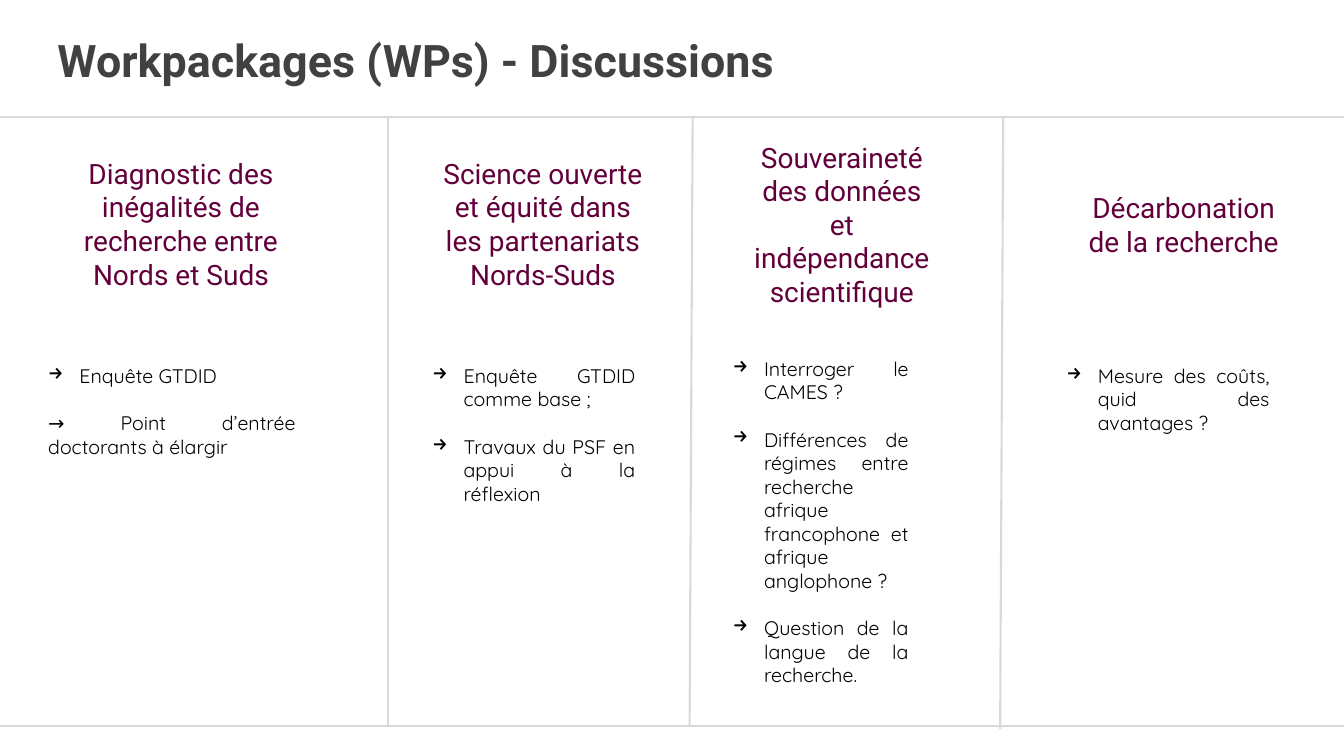
from lxml import etree
from pptx import Presentation
from pptx.dml.color import RGBColor
from pptx.enum.shapes import MSO_CONNECTOR
from pptx.enum.text import MSO_ANCHOR, MSO_AUTO_SIZE, PP_ALIGN
from pptx.oxml.ns import qn
from pptx.util import Inches, Pt

STRAIGHT = MSO_CONNECTOR.STRAIGHT
TOP = MSO_ANCHOR.TOP
GROW = MSO_AUTO_SIZE.SHAPE_TO_FIT_TEXT
LEFT, CENTER, JUSTIFY = PP_ALIGN.LEFT, PP_ALIGN.CENTER, PP_ALIGN.JUSTIFY

WIDTH, HEIGHT = 13.33, 7.5
GREY, DARK, PLUM, BLACK = "D9D9D9", "414042", "63003C", "000000"
ARROW = "→"
HANGING = 0.31
ITEM_GAP = 17

TITLE = "Workpackages (WPs) - Discussions"

# Boxes are left, top, width, height; an item is its text and whether it has a bullet.
WORKPACKAGES = [
    {
        "heading": "Diagnostic des inégalités de recherche entre Nords et Suds",
        "heading_box": (0.47, 1.5, 2.65, 1.45),
        "items": [("Enquête GTDID", True),
                  ("→ Point d’entrée doctorants à élargir", False)],
        "items_box": (0.38, 3.56, 2.65, 1.04),
    },
    {
        "heading": "Science ouverte et équité dans les partenariats Nords-Suds",
        "heading_box": (4.23, 1.5, 2.31, 1.45),
        "items": [("Enquête GTDID comme base ;", True),
                  ("Travaux du PSF en appui à la réflexion", True)],
        "items_box": (4.19, 3.56, 2.21, 1.51),
    },
    {
        "heading": "Souveraineté des données et indépendance scientifique",
        "heading_box": (7.31, 1.34, 2.08, 1.78),
        "items": [("Interroger le CAMES ?", True),
                  ("Différences de régimes entre recherche afrique francophone "
                   "et afrique anglophone ?", True),
                  ("Question de la langue de la recherche.", True)],
        "items_box": (7.17, 3.49, 1.94, 3.4),
    },
    {
        "heading": "Décarbonation de la recherche",
        "heading_box": (10.62, 1.84, 2.24, 0.77),
        "items": [("Mesure des coûts, quid des avantages ?", True)],
        "items_box": (10.48, 3.56, 2.21, 1.04),
    },
]

# Start x, start y, end x, end y
RULES = [
    (0, 1.16, WIDTH, 1.16),
    (0, 7.2, WIDTH, 7.2),
    (3.85, 7.2, 3.85, 1.16),
    (6.84, 7.21, 6.87, 1.15),
    (9.92, 7.23, 9.95, 1.16),
]


def color(value):
    return RGBColor.from_string(value)


def add_rule(slide, ends):
    rule = slide.shapes.add_connector(STRAIGHT, *map(Inches, ends))
    rule.line.color.rgb = color(GREY)
    rule.line.width = Pt(1.5)
    etree.SubElement(rule._element.spPr, qn("a:effectLst"))


def add_arrow_bullet(paragraph):
    properties = paragraph._p.get_or_add_pPr()
    properties.set("marL", str(Inches(HANGING)))
    properties.set("indent", str(-Inches(HANGING)))
    bullet_color = etree.SubElement(properties, qn("a:buClr"))
    etree.SubElement(bullet_color, qn("a:srgbClr"), val=BLACK)
    etree.SubElement(properties, qn("a:buChar"), char=ARROW)


def fill_text(shape, box, items, alignment, font_name, size, text_color, bold=False):
    """Place a shape and write its items, each a text and a bullet flag."""
    shape.left, shape.top, shape.width, shape.height = map(Inches, box)
    frame = shape.text_frame
    frame.word_wrap = True
    frame.auto_size = GROW
    frame.vertical_anchor = TOP
    for index, (text, bulleted) in enumerate(items):
        paragraph = frame.add_paragraph() if index else frame.paragraphs[0]
        paragraph.text = text
        paragraph.alignment = alignment
        paragraph.space_before = Pt(ITEM_GAP if index else 0)
        if bulleted:
            add_arrow_bullet(paragraph)
        font = paragraph.font
        font.name, font.size, font.bold = font_name, Pt(size), bold
        font.color.rgb = color(text_color)


def add_text(slide, box, *style):
    fill_text(slide.shapes.add_textbox(*map(Inches, box)), box, *style)


def main():
    presentation = Presentation()
    presentation.slide_width = Inches(WIDTH)
    presentation.slide_height = Inches(HEIGHT)
    slide = presentation.slides.add_slide(presentation.slide_layouts[5])

    for ends in RULES:
        add_rule(slide, ends)
    fill_text(slide.shapes.title, (0.47, 0.27, 11.45, 0.64), [(TITLE, False)],
              LEFT, "Roboto", 32, DARK, True)
    for workpackage in WORKPACKAGES:
        add_text(slide, workpackage["heading_box"], [(workpackage["heading"], False)],
                 CENTER, "Roboto", 20, PLUM)
        add_text(slide, workpackage["items_box"], workpackage["items"],
                 JUSTIFY, "Quicksand", 14, BLACK)

    presentation.save("out.pptx")


if __name__ == "__main__":
    main()
